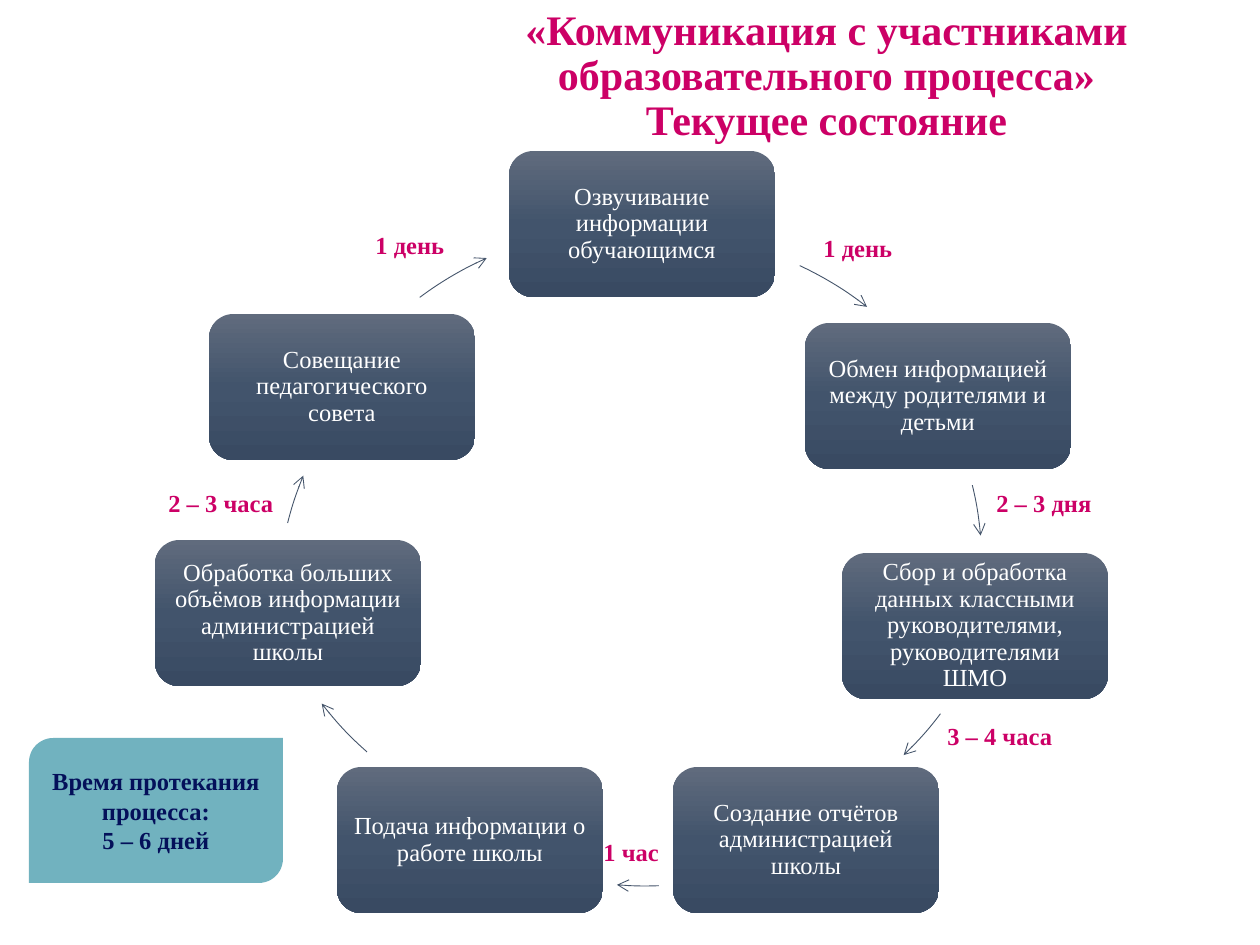
import copy
import pptx
import pptx.util
import pptx.dml.color
import pptx.enum.shapes
import pptx.enum.text
import pptx.oxml
import pptx.oxml.ns

# Content; places are in px, 126 to the inch
TITLE = "«Коммуникация с участниками образовательного процесса»\nТекущее состояние"
STEPS = [  # left, top, text
    (509, 151, "Озвучивание информации обучающимся"),
    (805, 323, "Обмен информацией между родителями и детьми"),
    (842, 553, "Сбор и обработка данных классными руководителями, руководителями ШМО"),
    (673, 767, "Создание отчётов администрацией школы"),
    (337, 767, "Подача информации о работе школы"),
    (155, 540, "Обработка больших объёмов информации администрацией школы"),
    (209, 314, "Совещание педагогического совета"),
]
ARCS = [  # left and top of the circle, start and end angle in degrees
    (304, 233, 295, 308),
    (285, 218, 346.5, 354.9),
    (314, 155, 37.1, 46.2),
    (297, 189, 87.8, 94.7),
    (249, 142, 131.4, 142.3),
    (277, 260, 194.2, 202.4),
    (280, 228, 233.2, 246),
]
TIMES = [  # left, top, width, text
    (156, 481, 149, "2 – 3 часа"),
    (363, 223, 106, "1 день"),
    (811, 226, 106, "1 день"),
    (984, 481, 149, "2 – 3 дня"),
    (935, 714, 149, "3 – 4 часа"),
    (591, 830, 93, "1 час"),
]
TOTAL = ["Время протекания процесса:", "5 – 6 дней"]

THEME = {
    "font": "Times New Roman", "head": 24, "body": 14,
    "pink": "CC0066", "white": "FFFFFF", "navy": "04105A",
    "line": "44546A", "teal": "71B2BF",
    "grad": [(0, "606B7D"), (0.5, "42546C"), (1, "394A62")],
}
BOX = (266, 146)
RING = 697
SHAPE = pptx.enum.shapes.MSO_SHAPE
ALIGN = pptx.enum.text.PP_ALIGN
MIDDLE = pptx.enum.text.MSO_ANCHOR.MIDDLE


def px(*nums):
    return [pptx.util.Emu(round(n * 914400 / 126)) for n in nums]


def color(name):
    return pptx.dml.color.RGBColor.from_string(THEME.get(name, name))


def write(shape, lines, size="body", ink="pink", bold=True,
          align=ALIGN.CENTER, space=None, inset=None):
    frame = shape.text_frame
    frame.word_wrap = True
    frame.vertical_anchor = MIDDLE
    if inset is not None:
        pad = px(inset)[0]
        frame.margin_left = frame.margin_right = pad
        frame.margin_top = frame.margin_bottom = pad
    for i, line in enumerate(lines):
        para = frame.add_paragraph() if i else frame.paragraphs[0]
        para.text = line
        para.alignment = align
        para.line_spacing = space
        for run in para.runs:
            run.font.name = THEME["font"]
            run.font.size = pptx.util.Pt(THEME[size])
            run.font.bold = bold
            run.font.color.rgb = color(ink)


def draw(kind, *place):
    shape = slide.shapes.add_shape(kind, *px(*place))
    shape.shadow.inherit = False
    shape.line.fill.background()
    return shape


def shade(shape):
    fill = shape.fill
    fill.gradient()
    fill.gradient_angle = 270
    first = shape.element.spPr.find(".//" + pptx.oxml.ns.qn("a:gs"))
    first.addnext(copy.deepcopy(first))
    for stop, (spot, tone) in zip(fill.gradient_stops, THEME["grad"]):
        stop.position = spot
        stop.color.rgb = color(tone)


def arrow(left, top, start, end):
    arc = draw(SHAPE.ARC, left, top, RING, RING)
    # Arc angles count in 1/60000 degree, adjustments in 1/100000
    arc.adjustments[0] = start * 0.6
    arc.adjustments[1] = end * 0.6
    arc.fill.background()
    arc.line.color.rgb = color("line")
    arc.line.width = pptx.util.Pt(0.5)
    tip = pptx.oxml.parse_xml(
        f'<a:tailEnd {pptx.oxml.ns.nsdecls("a")} type="arrow"/>')
    arc.line._get_or_add_ln().append(tip)


deck = pptx.Presentation()
deck.slide_width, deck.slide_height = px(1260, 945)
slide = deck.slides.add_slide(deck.slide_layouts[5])

# Title
title = slide.shapes.title
title.left, title.top, title.width, title.height = px(393, 0, 867, 154)
write(title, [TITLE], size="head", space=0.9)

# Cycle of steps, each followed by its arrow
for (left, top, text), arc in zip(STEPS, ARCS):
    step = draw(SHAPE.ROUNDED_RECTANGLE, left, top, *BOX)
    shade(step)
    write(step, [text], ink="white", bold=False, space=0.9, inset=8)
    arrow(*arc)

# Time taken by each step
for left, top, width, text in TIMES:
    label = slide.shapes.add_textbox(*px(left, top, width, 43))
    write(label, [text], align=ALIGN.LEFT)

# Total time
total = draw(SHAPE.ROUND_2_DIAG_RECTANGLE, 29, 738, 254, 145)
total.fill.solid()
total.fill.fore_color.rgb = color("teal")
write(total, TOTAL, ink="navy")

deck.save("out.pptx")
